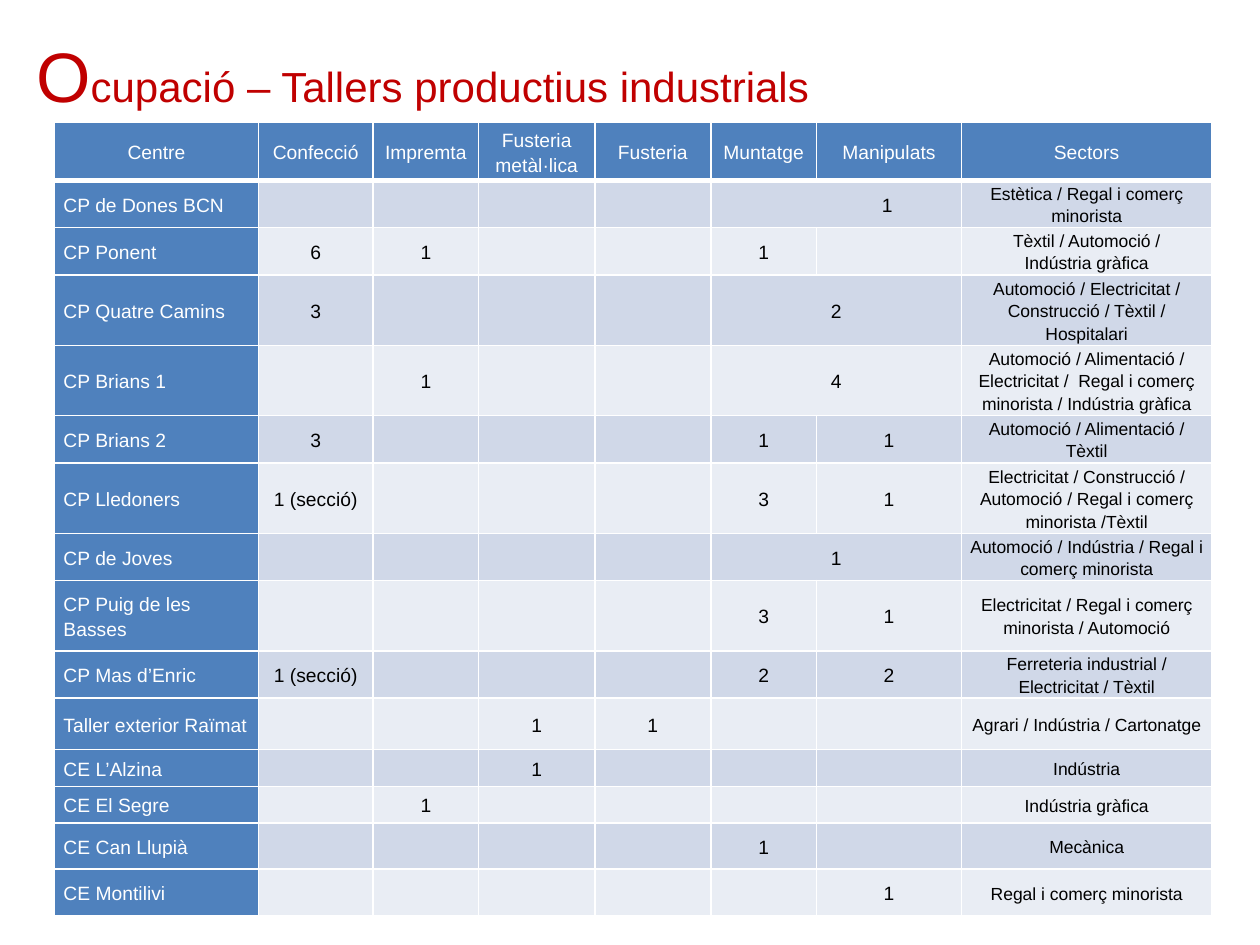
from lxml.etree import SubElement
from pptx import Presentation
from pptx.dml.color import RGBColor
from pptx.enum.text import MSO_ANCHOR, MSO_AUTO_SIZE, PP_ALIGN
from pptx.oxml.ns import qn
from pptx.util import Cm, Pt

COLORS = {
    "title": "C00000",
    "heading": "4F81BD",
    "odd": "D0D8E8",
    "even": "E9EDF4",
    "light": "FFFFFF",
    "dark": "000000",
}
FONT = "Arial"
COLUMN_WIDTHS = [4.11, 2.31, 2.13, 2.34, 2.34, 2.13, 2.92, 5.05]
HEADINGS = ["Centre", "Confecció", "Impremta", "Fusteria metàl·lica", "Fusteria",
            "Muntatge", "Manipulats", "Sectors"]
HEADING_HEIGHT = 1.17
MUNTATGE, MANIPULATS, SECTORS = 5, 6, 7
SHARED = None
CENTRES = [
    (0.95, "CP de Dones BCN", ["", "", "", "", "1", SHARED],
     "Estètica / Regal i comerç minorista"),
    (0.95, "CP Ponent", ["6", "1", "", "", "1", ""],
     "Tèxtil / Automoció /\nIndústria gràfica"),
    (1.42, "CP Quatre Camins", ["3", "", "", "", "2", SHARED],
     "Automoció / Electricitat / Construcció / Tèxtil / Hospitalari"),
    (1.42, "CP Brians 1", ["", "1", "", "", "4", SHARED],
     "Automoció / Alimentació / Electricitat /  Regal i comerç minorista / Indústria gràfica"),
    (0.95, "CP Brians 2", ["3", "", "", "", "1", "1"],
     "Automoció / Alimentació / Tèxtil"),
    (1.42, "CP Lledoners", ["1 (secció)", "", "", "", "3", "1"],
     "Electricitat / Construcció / Automoció / Regal i comerç minorista /Tèxtil"),
    (0.95, "CP de Joves", ["", "", "", "", "1", SHARED],
     "Automoció / Indústria / Regal i comerç minorista"),
    (1.42, "CP Puig de les Basses", ["", "", "", "", "3", "1"],
     "Electricitat / Regal i comerç minorista / Automoció"),
    (0.95, "CP Mas d’Enric", ["1 (secció)", "", "", "", "2", "2"],
     "Ferreteria industrial / Electricitat / Tèxtil"),
    (1.04, "Taller exterior Raïmat", ["", "", "1", "1", "", ""],
     "Agrari / Indústria / Cartonatge"),
    (0.74, "CE L’Alzina", ["", "", "1", "", "", ""], "Indústria"),
    (0.74, "CE El Segre", ["", "1", "", "", "", ""], "Indústria gràfica"),
    (0.93, "CE Can Llupià", ["", "", "", "", "1", ""], "Mecànica"),
    (0.95, "CE Montilivi", ["", "", "", "", "", "1"], "Regal i comerç minorista"),
]


def add_run(paragraph, text, size, color):
    """Add one formatted run to a paragraph."""
    run = paragraph.add_run()
    run.text = text
    run.font.name = FONT
    run.font.size = Pt(size)
    run.font.bold = False
    run.font.color.rgb = RGBColor.from_string(COLORS[color])


def add_borders(cell, bottom_width):
    """Draw white lines on the four sides of a cell."""
    properties = cell._tc.get_or_add_tcPr()
    for side, width in (("L", 1), ("R", 1), ("T", 1), ("B", bottom_width)):
        line = SubElement(properties, qn(f"a:ln{side}"), w=str(Pt(width)))
        fill = SubElement(line, qn("a:solidFill"))
        SubElement(fill, qn("a:srgbClr"), val=COLORS["light"])


def fill_cell(cell, text, fill, color="dark", size=11, align=PP_ALIGN.CENTER, bottom_width=1):
    """Write the text of a cell and set its fill, margins and borders."""
    add_borders(cell, bottom_width)
    cell.fill.solid()
    cell.fill.fore_color.rgb = RGBColor.from_string(COLORS[fill])
    cell.margin_left = cell.margin_right = Cm(0.18)
    cell.margin_top = cell.margin_bottom = 0
    cell.vertical_anchor = MSO_ANCHOR.MIDDLE
    for number, line in enumerate(text.split("\n")):
        paragraphs = cell.text_frame.paragraphs
        paragraph = cell.text_frame.add_paragraph() if number else paragraphs[0]
        paragraph.alignment = align
        paragraph.line_spacing = 1.15
        if line:
            add_run(paragraph, line, size, color)
        else:
            paragraph._p.get_or_add_endParaRPr().set("sz", str(size * 100))


def place_title(slide, left, top, width, height):
    """Place the slide title with its large initial."""
    title = slide.shapes.title
    title.left, title.top, title.width, title.height = left, top, width, height
    frame = title.text_frame
    frame.auto_size = MSO_AUTO_SIZE.NONE
    frame.vertical_anchor = MSO_ANCHOR.MIDDLE
    frame.margin_left = Cm(0.73)
    heading = frame.paragraphs[0]
    heading.alignment = PP_ALIGN.LEFT
    add_run(heading, "O", 40, "title")
    add_run(heading, "cupació – Tallers productius industrials", 24, "title")


def place_workshops(slide, left, top, width, height):
    """Place the table of workshops by centre."""
    workshops = slide.shapes.add_table(
        len(CENTRES) + 1, len(HEADINGS), left, top, width, height).table
    workshops.horz_banding = False
    for column, column_width in zip(workshops.columns, COLUMN_WIDTHS):
        column.width = Cm(column_width)
    workshops.rows[0].height = Cm(HEADING_HEIGHT)
    for column, heading in enumerate(HEADINGS):
        fill_cell(workshops.cell(0, column), heading, "heading", "light", bottom_width=3)

    for row, (row_height, centre, counts, sectors) in enumerate(CENTRES, start=1):
        band = "odd" if row % 2 else "even"
        workshops.rows[row].height = Cm(row_height)
        fill_cell(workshops.cell(row, 0), centre, "heading", "light", align=PP_ALIGN.LEFT)
        for column, count in enumerate(counts, start=1):
            fill_cell(workshops.cell(row, column), count or "", band)
        if counts[-1] is SHARED:
            workshops.cell(row, MUNTATGE).merge(workshops.cell(row, MANIPULATS))
        fill_cell(workshops.cell(row, SECTORS), sectors, band, size=10)

    dones_count = workshops.cell(1, MUNTATGE).text_frame.paragraphs[0]
    dones_count._p.get_or_add_pPr().set("marL", str(Cm(2.06)))


def main():
    """Build the slide and save it."""
    presentation = Presentation()
    presentation.slide_width, presentation.slide_height = Cm(25.4), Cm(19.05)
    slide = presentation.slides.add_slide(presentation.slide_layouts[5])
    place_title(slide, Cm(0), Cm(-0.08), Cm(25.4), Cm(3.18))
    table_height = HEADING_HEIGHT + sum(centre[0] for centre in CENTRES)
    place_workshops(slide, Cm(1.1), Cm(2.47), Cm(sum(COLUMN_WIDTHS)), Cm(table_height))
    presentation.save("out.pptx")


if __name__ == "__main__":
    main()
